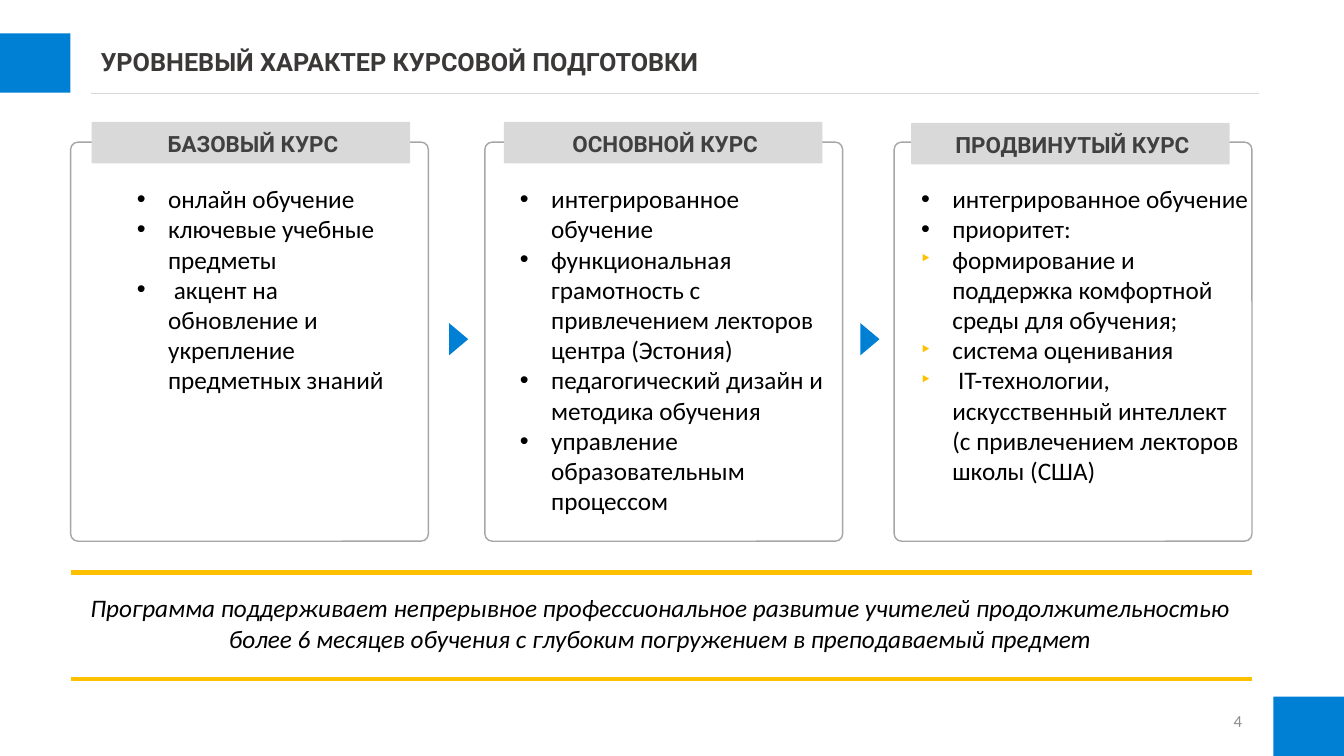
import pptx
import pptx.util
import pptx.dml.color
import pptx.enum.shapes
import pptx.enum.text
import lxml.etree
from pptx.oxml.ns import qn

RGB = pptx.dml.color.RGBColor
SHAPE = pptx.enum.shapes.MSO_SHAPE
ALIGN = pptx.enum.text.PP_ALIGN
ANCHOR = pptx.enum.text.MSO_ANCHOR

BLUE = RGB(0x00, 0x80, 0xD5)
GOLD = RGB(0xFF, 0xC0, 0x00)
WHITE = RGB(0xFF, 0xFF, 0xFF)
BLACK = RGB(0x00, 0x00, 0x00)
INK = RGB(0x3B, 0x38, 0x38)
DARK = RGB(0x40, 0x40, 0x40)
GRAY = RGB(0x8C, 0x8C, 0x8C)
EDGE = RGB(0xA6, 0xA6, 0xA6)
PALE = RGB(0xD9, 0xD9, 0xD9)

COLS, ROWS = 133.33, 75
CELL = pptx.util.Inches(0.1)
LEFT, RIGHT = 7, 124.2
ROUND = 0.021
DOT, ARROW = "•", "‣"

CARDS = [
    (7, (9.1, 12.1), (12.6, 27.3), "БАЗОВЫЙ КУРС", [
        (DOT, "онлайн обучение"),
        (DOT, "ключевые учебные предметы"),
        (DOT, " акцент на обновление и укрепление предметных знаний"),
    ]),
    (48.1, (50, 12.1), (50.6, 32.2), "ОСНОВНОЙ КУРС", [
        (DOT, "интегрированное обучение"),
        (DOT, "функциональная грамотность с привлечением лекторов центра (Эстония)"),
        (DOT, "педагогический дизайн и методика обучения"),
        (DOT, "управление образовательным процессом"),
    ]),
    (88.7, (90.4, 12.2), (90.4, 34.6), "ПРОДВИНУТЫЙ КУРС", [
        (DOT, "интегрированное обучение"),
        (DOT, "приоритет:"),
        (ARROW, "формирование и поддержка комфортной среды для обучения;"),
        (ARROW, "система оценивания"),
        (ARROW, " IT-технологии, искусственный интеллект (с привлечением лекторов школы (США)"),
    ]),
]


def grid(*cells):
    return [round(n * CELL) for n in cells]


def add_box(slide, kind, spot, fill, edge=None, turn=0):
    box = slide.shapes.add_shape(kind, *grid(*spot))
    box.shadow.inherit = False
    box.rotation = turn
    box.fill.solid()
    box.fill.fore_color.rgb = fill
    if edge is None:
        box.line.fill.background()
    else:
        box.line.color.rgb = edge
        box.line.width = pptx.util.Pt(1)
    if kind == SHAPE.ROUNDED_RECTANGLE:
        box.adjustments[0] = ROUND


def add_rule(slide, left, right, top, color, width):
    kind = pptx.enum.shapes.MSO_CONNECTOR.STRAIGHT
    rule = slide.shapes.add_connector(kind, *grid(left, top, right, top))
    rule.line.color.rgb = color
    rule.line.width = pptx.util.Pt(width)
    props = rule._element.find(qn("p:spPr"))
    lxml.etree.SubElement(props, qn("a:effectLst"))


def set_mark(para, mark):
    props = para._p.get_or_add_pPr()
    props.set("marL", str(pptx.util.Inches(0.31)))
    props.set("indent", str(-pptx.util.Inches(0.31)))
    if mark == ARROW:
        tint = lxml.etree.SubElement(props, qn("a:buClr"))
        lxml.etree.SubElement(tint, qn("a:srgbClr"), val=str(GOLD))
    lxml.etree.SubElement(props, qn("a:buFont"), typeface="Arial")
    lxml.etree.SubElement(props, qn("a:buChar"), char=mark)


def add_text(slide, spot, lines, size=18, font="Calibri", color=BLACK,
             bold=False, slant=False, align=ALIGN.LEFT, anchor=ANCHOR.TOP,
             space=None):
    frame = slide.shapes.add_textbox(*grid(*spot)).text_frame
    frame.word_wrap = True
    frame.vertical_anchor = anchor
    for i, (mark, words) in enumerate(lines):
        para = frame.add_paragraph() if i else frame.paragraphs[0]
        para.alignment = align
        if space:
            para.line_spacing = space
        if mark:
            set_mark(para, mark)
        run = para.add_run()
        run.text = words
        run.font.name = font
        run.font.size = pptx.util.Pt(size)
        run.font.color.rgb = color
        run.font.bold = bold
        run.font.italic = slant


def add_card(slide, left, tag, body, name, items):
    add_box(slide, SHAPE.ROUNDED_RECTANGLE, (left, 14.1, 35.5, 39.6), WHITE, EDGE)
    add_text(slide, (body[0], 17.7, body[1], 34.3), items)
    add_box(slide, SHAPE.ROUNDED_RECTANGLE, (*tag, 31.6, 4.1), PALE)
    add_text(slide, (tag[0] + 1.2, tag[1] + 0.3, 29.6, 3.7), [(None, name)],
             size=16, font="Roboto", color=DARK, bold=True, align=ALIGN.CENTER)


def add_head(slide):
    add_rule(slide, 9, 124.9, 9.3, PALE, 0.5)
    add_text(slide, (9, 2.8, 94.3, 7),
             [(None, "УРОВНЕВЫЙ ХАРАКТЕР КУРСОВОЙ ПОДГОТОВКИ")],
             font="Roboto", color=INK, bold=True, anchor=ANCHOR.MIDDLE, space=0.9)
    for left, top in ((0, 3.3), (COLS - 7, ROWS - 5.9)):
        add_box(slide, SHAPE.RECTANGLE, (left, top, 7, 5.9), BLUE)


def add_foot(slide):
    add_text(slide, (LEFT, 58.3, 117, 7.1), [(None,
             "Программа поддерживает непрерывное профессиональное развитие "
             "учителей продолжительностью более 6 месяцев обучения с глубоким "
             "погружением в преподаваемый предмет")],
             slant=True, align=ALIGN.CENTER)
    for top in (56.8, 67.4):
        add_rule(slide, LEFT, RIGHT, top, GOLD, 3)
    add_text(slide, (RIGHT - 30, 69.5, 30, 4), [(None, "4")], size=12,
             color=GRAY, align=ALIGN.RIGHT, anchor=ANCHOR.MIDDLE)


def main():
    deck = pptx.Presentation()
    deck.slide_width, deck.slide_height = grid(COLS, ROWS)
    slide = deck.slides.add_slide(deck.slide_layouts[6])
    add_head(slide)
    for card in CARDS:
        add_card(slide, *card)
    for left in (43.9, 84.7):
        add_box(slide, SHAPE.ISOSCELES_TRIANGLE, (left, 32.7, 3.2, 1.9), BLUE, turn=90)
    add_foot(slide)
    deck.save("out.pptx")


if __name__ == "__main__":
    main()
